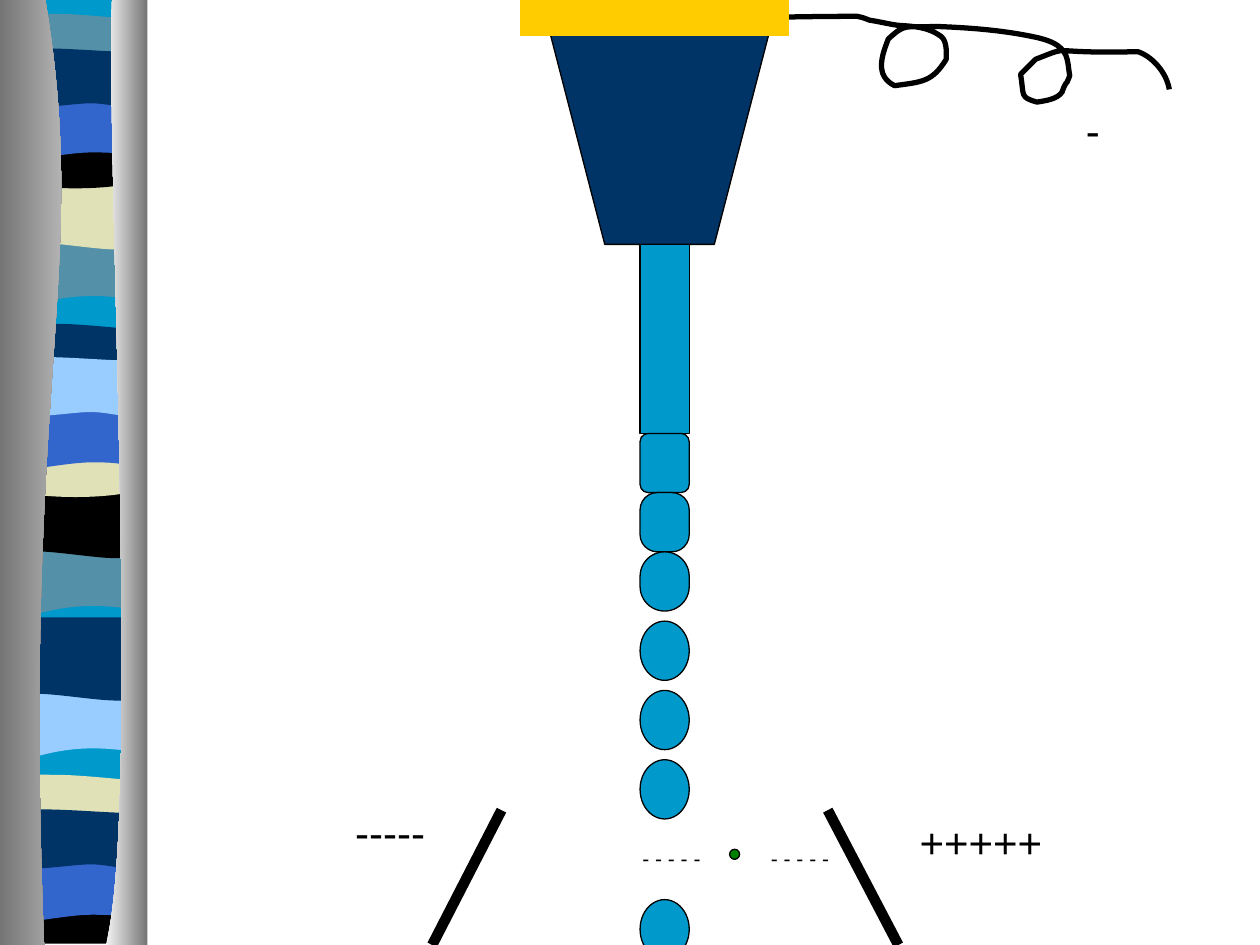
import pptx
import pptx.dml.color
import pptx.enum.shapes
import pptx.oxml.ns
import pptx.util
import lxml.etree

RGB = pptx.dml.color.RGBColor
SHAPE = pptx.enum.shapes.MSO_SHAPE
BLACK = RGB(0x00, 0x00, 0x00)
NAVY = RGB(0x00, 0x33, 0x66)
BLUE = RGB(0x33, 0x66, 0xCC)
SKY = RGB(0x99, 0xCC, 0xFF)
CYAN = RGB(0x00, 0x99, 0xCC)
TEAL = RGB(0x54, 0x90, 0xA8)
SAND = RGB(0xE1, 0xE1, 0xB7)
GOLD = RGB(0xFF, 0xCC, 0x00)
GREEN = RGB(0x00, 0x80, 0x00)
DARK_GREY = RGB(0x75, 0x75, 0x75)
MID_GREY = RGB(0xD0, 0xD0, 0xD0)
LIGHT_GREY = RGB(0xF4, 0xF4, 0xF4)

LEFT, RIGHT = 0.05, 1.14
WAVES = {
    "swell": [(RIGHT, 0), (RIGHT, 0.54), (0.39, 0.4, 0.24, 0.68, LEFT, 0.54), (LEFT, 0)],
    "ripple": [(RIGHT, -0.09), (RIGHT, 0.53), (0.96, 0.65, 0.39, 0.46, LEFT, 0.53),
               (LEFT, -0.09)],
    "crest": [(RIGHT, -0.05), (RIGHT, 0.24), (0.96, 0.29, 0.24, 0.29, LEFT, 0.24),
              (LEFT, -0.06), (0.12, -0.12, 0.28, -0.1, 0.46, -0.1),
              (0.64, -0.1, 0.99, -0.06, RIGHT, -0.05)],
    "bowl": [(RIGHT, 0), (RIGHT, 0.34), (0.96, 0.44, 0.24, 0.44, LEFT, 0.34), (LEFT, 0),
             (0.72, 0.05, 0.91, 0, RIGHT, 0)],
    "arch": [(RIGHT, 0), (RIGHT, 0.54), (0.97, 0.47, 0.9, 0.47, 0.72, 0.47),
             (0.54, 0.47, 0.22, 0.54, LEFT, 0.54), (LEFT, 0)],
    "hump": [(RIGHT, -0.05), (RIGHT, 0.35), (1.07, 0.44, 0.9, 0.36, 0.72, 0.36),
             (0.54, 0.36, 0.17, 0.44, LEFT, 0.35), (LEFT, -0.05),
             (0.21, -0.11, 0.79, -0.05, 0.97, -0.05)],
    "base": [(RIGHT, 0), (RIGHT, 0.37), (LEFT, 0.37), (LEFT, 0), (0.71, 0.05, 0.9, 0, RIGHT, 0)],
    "column": [(RIGHT, 0), (RIGHT, 7.48), (LEFT, 7.48), (LEFT, 0)],
}
BANDS = [
    ("column", 0, CYAN), ("swell", 1.85, TEAL), ("ripple", 1.41, SAND), ("crest", 0.21, TEAL),
    ("bowl", 1.08, BLACK), ("arch", 0.74, BLUE), ("hump", 0.46, NAVY),
    ("swell", 4.31, TEAL), ("ripple", 3.86, BLACK), ("crest", 2.67, NAVY),
    ("bowl", 3.53, SAND), ("arch", 3.2, BLUE), ("hump", 2.91, SKY),
    ("swell", 5.44, SKY), ("ripple", 4.99, NAVY), ("crest", 6.25, SAND),
    ("base", 7.12, BLACK), ("arch", 6.79, BLUE), ("hump", 6.5, NAVY),
]
LEFT_EDGE = [(0.36, 0), (0.72, 2.16, 0.17, 2.96, 0.35, 7.5), (0, 7.5), (0, 0)]
RIGHT_EDGE = [(0.89, 0), (0.84, 1.25, 1.12, 6.46, 0.84, 7.5), (1.17, 7.5), (1.17, 0)]
NOZZLE = [(4.37, 0.28), (4.8, 1.94), (5.67, 1.94), (6.1, 0.28)]
WIRE = [
    (9.28, 0.71), (9.26, 0.58, 9.15, 0.45, 9.03, 0.41), (8.27, 0.43, 8.53, 0.35, 8.22, 0.47),
    (8.18, 0.51, 8.14, 0.55, 8.1, 0.59), (8.13, 0.76, 8.09, 0.77, 8.23, 0.81),
    (8.29, 0.8, 8.39, 0.79, 8.43, 0.73), (8.44, 0.7, 8.45, 0.67, 8.47, 0.65),
    (8.48, 0.63, 8.49, 0.6, 8.49, 0.6), (8.48, 0.55, 8.48, 0.49, 8.46, 0.44),
    (8.42, 0.35, 8.32, 0.32, 8.24, 0.3), (7.97, 0.24, 7.7, 0.22, 7.43, 0.21),
    (7.18, 0.22, 7.19, 0.18, 7.05, 0.31), (7, 0.44, 6.94, 0.6, 7.1, 0.68),
    (7.32, 0.65, 7.4, 0.65, 7.51, 0.47), (7.51, 0.43, 7.52, 0.33, 7.47, 0.29),
    (7.36, 0.21, 7.25, 0.21, 7.12, 0.2), (7.05, 0.19, 6.97, 0.17, 6.9, 0.16),
    (6.8, 0.12, 6.82, 0.13, 6.68, 0.13), (6.49, 0.13, 5.93, 0.14, 6.11, 0.14),
]
JET_X, JET_W, DROP_H = 5.08, 0.39, 0.47


def inch(value):
    """Convert inches to a length in centimetres."""
    return pptx.util.Cm(value * 2.54)


def bend(sp, path):
    """Join the three line steps of each curved segment into one Bezier curve."""
    steps = iter(sp._element.findall(".//" + pptx.oxml.ns.qn("a:lnTo")))
    for seg in path[1:]:
        first = next(steps)
        if len(seg) == 2:
            continue
        curve = lxml.etree.Element(pptx.oxml.ns.qn("a:cubicBezTo"))
        first.addprevious(curve)
        for step in (first, next(steps), next(steps)):
            curve.append(step[0])
            step.getparent().remove(step)


def style(sp, fill=None, line=None, width=0.75):
    """Set fill and outline of a shape, without shadow."""
    sp.shadow.inherit = False
    if fill is None:
        sp.fill.background()
    else:
        sp.fill.solid()
        sp.fill.fore_color.rgb = fill
    if line is None:
        sp.line.fill.background()
    else:
        sp.line.color.rgb = line
        sp.line.width = pptx.util.Pt(width)


def add_outline(s, path, closed=True, dy=0, **look):
    """Add a freeform of lines and curves, moved down by dy."""
    points = [(inch(seg[i]), inch(seg[i + 1] + dy))
              for seg in path for i in range(0, len(seg), 2)]
    builder = s.shapes.build_freeform(*points[0], scale=1.0)
    builder.add_line_segments(points[1:], close=closed)
    sp = builder.convert_to_shape()
    bend(sp, path)
    style(sp, **look)
    return sp


def add_edge(s, path, start, end):
    """Add a column edge shaded from left to right."""
    sp = add_outline(s, path)
    sp.fill.gradient()
    sp.fill.gradient_angle = 0
    for stop, color in zip(sp.fill.gradient_stops, (start, end)):
        stop.color.rgb = color


def add_shape(s, kind, x, y, w, h, fill, line=BLACK, adj=None):
    """Add a filled and outlined preset shape."""
    sp = s.shapes.add_shape(kind, inch(x), inch(y), inch(w), inch(h))
    style(sp, fill, line)
    if adj is not None:
        sp.adjustments[0] = adj


def add_plate(s, x1, x2):
    """Add a thick slanted deflection plate."""
    sp = s.shapes.add_connector(pptx.enum.shapes.MSO_CONNECTOR.STRAIGHT,
                                inch(x1), inch(6.43), inch(x2), inch(7.5))
    sp.line.color.rgb = BLACK
    sp.line.width = pptx.util.Pt(6)
    lxml.etree.SubElement(sp._element.spPr, pptx.oxml.ns.qn("a:effectLst"))


def add_label(s, text, x, y, w, h, size):
    """Add a one-line label."""
    tf = s.shapes.add_textbox(inch(x), inch(y), inch(w), inch(h)).text_frame
    tf.word_wrap = False
    tf.text = text
    font = tf.paragraphs[0].runs[0].font
    font.name = "Arial"
    font.size = pptx.util.Pt(size)
    font.color.rgb = BLACK


def main():
    """Build the slide and save it."""
    prs = pptx.Presentation()
    prs.slide_width, prs.slide_height = inch(10), inch(7.5)
    s = prs.slides.add_slide(prs.slide_layouts[6])

    for wave, top, color in BANDS:
        add_outline(s, WAVES[wave], dy=top, fill=color)
    add_edge(s, LEFT_EDGE, DARK_GREY, MID_GREY)
    add_edge(s, RIGHT_EDGE, LIGHT_GREY, DARK_GREY)

    add_outline(s, NOZZLE, fill=NAVY, line=BLACK)
    add_shape(s, SHAPE.RECTANGLE, JET_X, 1.94, JET_W, 1.5, CYAN)
    for y in (4.93, 5.48):
        add_shape(s, SHAPE.OVAL, JET_X, y, JET_W, DROP_H, CYAN)
    add_shape(s, SHAPE.OVAL, 5.79, 6.74, 0.08, 0.08, GREEN)
    add_plate(s, 3.98, 3.43)
    add_plate(s, 6.57, 7.13)
    add_shape(s, SHAPE.OVAL, JET_X, 6.03, JET_W, DROP_H, CYAN)
    add_outline(s, WIRE, closed=False, line=BLACK, width=3)
    add_shape(s, SHAPE.RECTANGLE, 4.13, 0, 2.13, 0.28, GOLD, GOLD)
    add_label(s, "-", 8.52, 0.78, 0.31, 0.51, 24)
    add_label(s, "+++++", 7.2, 6.43, 1.18, 0.51, 24)
    add_label(s, "-----", 2.72, 6.35, 0.76, 0.51, 24)
    for i, adj in enumerate((0.167, 0.352, 0.5)):
        add_shape(s, SHAPE.ROUNDED_RECTANGLE, JET_X, 3.44 + i * DROP_H, JET_W, DROP_H,
                  CYAN, adj=adj)
    add_shape(s, SHAPE.OVAL, JET_X, 7.14, JET_W, DROP_H, CYAN)
    for x in (5, 6.02):
        add_label(s, "- - - - -", x, 6.66, 0.67, 0.3, 12)
    prs.save("out.pptx")


if __name__ == "__main__":
    main()
